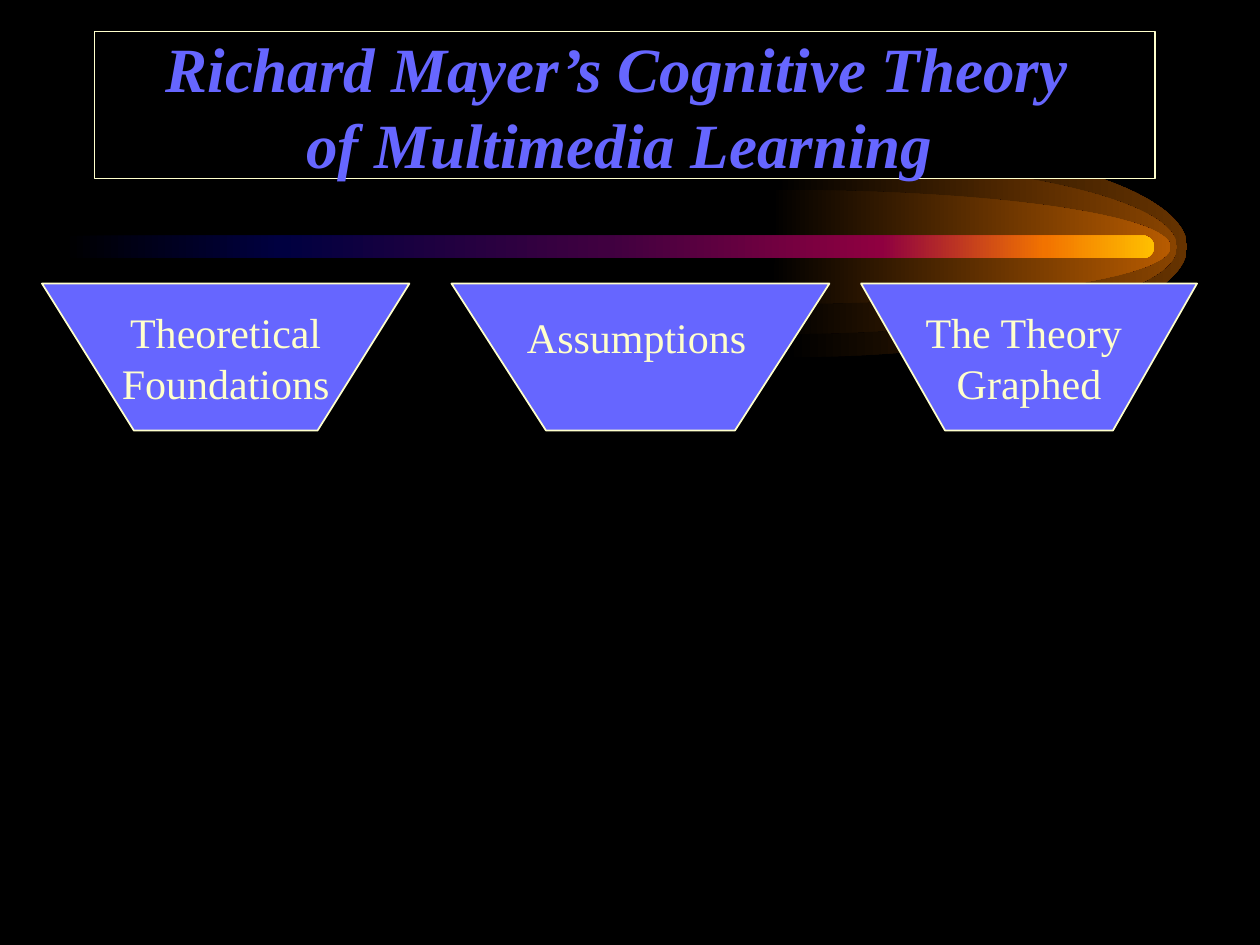
from copy import deepcopy

from lxml.etree import SubElement
from pptx import Presentation
from pptx.dml.color import RGBColor
from pptx.enum.shapes import MSO_SHAPE
from pptx.enum.text import MSO_ANCHOR, MSO_AUTO_SIZE, PP_ALIGN
from pptx.oxml.ns import qn
from pptx.util import Pt

RECTANGLE, ROUNDED = MSO_SHAPE.RECTANGLE, MSO_SHAPE.ROUNDED_RECTANGLE
TOP, MIDDLE = MSO_ANCHOR.TOP, MSO_ANCHOR.MIDDLE
CENTER, LEFT = PP_ALIGN.CENTER, PP_ALIGN.LEFT
GROW = MSO_AUTO_SIZE.SHAPE_TO_FIT_TEXT
FONT = "Times New Roman"
COLORS = {
    "black": "000000", "violet": "6666FF", "cream": "FFFFCC",
    "outer": "663300", "middle": "894400", "inner": "B75B00",
    "navy": "000040", "purple": "400040", "crimson": "8F0040",
    "orange": "F27300", "gold": "FFBF00",
}
COMET_STOPS = [(0, "black"), (0.2, "navy"), (0.5, "purple"),
               (0.75, "crimson"), (0.9, "orange"), (1, "gold")]
GLOWS = [(449.3, 63, "outer"), (443.5, 49.8, "middle"), (439.9, 32.6, "inner")]
COMET_MIDDLE = 141.1
GLOW_WIDTH, GLOW_INSET = 229, 3.6
CURVE = 0.55
TRAPEZOID_LEFT, TRAPEZOID_PITCH = 24, 234
TRAPEZOID_TOP, TRAPEZOID_HEIGHT = 162, 84
TRAPEZOIDS = [(210, ["Theoretical", "Foundations"]), (216, []),
              (192, ["The Theory ", "Graphed"])]


def color(name):
    """Return the named colour."""
    return RGBColor.from_string(COLORS[name])


def paint(shape, fill, line="cream"):
    """Give a shape a solid fill and a thin outline."""
    shape.shadow.inherit = False
    shape.fill.solid()
    shape.fill.fore_color.rgb = color(fill)
    shape.line.color.rgb = color(line)
    shape.line.width = Pt(1)


def paint_gradient(shape, stops):
    """Fill a shape from left to right through the given colour stops."""
    shape.shadow.inherit = False
    shape.line.fill.background()
    shape.fill.gradient()
    shape.fill.gradient_angle = 0
    stop_list = shape._element.spPr.find(qn("a:gradFill")).find(qn("a:gsLst"))
    for _ in stops[2:]:
        stop_list.append(deepcopy(stop_list[0]))
    for stop, (position, name) in zip(shape.fill.gradient_stops, stops):
        stop.position = position
        stop.color.rgb = color(name)


def write(shape, lines, size=24, ink="cream", align=CENTER, anchor=MIDDLE, strong=False):
    """Write one paragraph for each line in a shape."""
    frame = shape.text_frame
    frame.word_wrap = False
    frame.vertical_anchor = anchor
    frame.text = "\n".join(lines)
    for paragraph in frame.paragraphs:
        paragraph.alignment = align
        font = paragraph.font
        font.name, font.size = FONT, Pt(size)
        font.bold = font.italic = strong
        font.color.rgb = color(ink)


def add_polygon(page, points):
    """Add a closed outline through the points."""
    corners = [(Pt(x), Pt(y)) for x, y in points]
    builder = page.shapes.build_freeform(*corners[0])
    builder.add_line_segments(corners[1:], close=True)
    return builder.convert_to_shape()


def bend(shape, curves):
    """Turn the first line segments, three at a time, into curves."""
    outline = next(shape._element.iter(qn("a:path")))
    lines = outline.findall(qn("a:lnTo"))
    for start in range(0, 3 * curves, 3):
        curve = SubElement(outline, qn("a:cubicBezTo"))
        lines[start].addprevious(curve)
        for line in lines[start:start + 3]:
            curve.append(line[0])
            outline.remove(line)


def add_glow(page, left, radius, edge):
    """Add a half ellipse that brightens towards its right edge."""
    right, middle = left + GLOW_WIDTH, COMET_MIDDLE
    start = left + GLOW_INSET
    shoulder = start + CURVE * (right - start)
    glow = add_polygon(page, [
        (start, middle - radius), (shoulder, middle - radius),
        (right, middle - CURVE * radius), (right, middle),
        (right, middle + CURVE * radius), (shoulder, middle + radius),
        (left, middle + radius), (start, middle)])
    bend(glow, 2)
    paint_gradient(glow, [(0, "black"), (1, edge)])


def add_comet(page):
    """Add the glows and the rounded bar in front of them."""
    for glow in GLOWS:
        add_glow(page, *glow)
    bar = page.shapes.add_shape(ROUNDED, Pt(36), Pt(COMET_MIDDLE - 6.5), Pt(623.5), Pt(13))
    bar.adjustments[0] = 0.5
    paint_gradient(bar, COMET_STOPS)


def add_title(page):
    """Add the framed title, with a small closing space."""
    box = page.shapes.add_shape(RECTANGLE, Pt(54), Pt(18), Pt(606), Pt(84))
    paint(box, "black")
    write(box, ["Richard Mayer’s Cognitive Theory ", "of Multimedia Learning"],
          size=36, ink="violet", strong=True)
    span = box.text_frame.paragraphs[-1].add_run()
    span.text = " "
    span.font.size = Pt(24)
    span.font.bold = span.font.italic = False
    span.font.color.rgb = color("cream")


def add_trapezoid(page, left, width, lines):
    """Add a trapezoid that narrows by a quarter on each side."""
    inset, right = width / 4, left + width
    bottom = TRAPEZOID_TOP + TRAPEZOID_HEIGHT
    shape = add_polygon(page, [(left, TRAPEZOID_TOP), (left + inset, bottom),
                               (right - inset, bottom), (right, TRAPEZOID_TOP)])
    paint(shape, "violet")
    if lines:
        write(shape, lines)


def add_label(page):
    """Add the label that lies on the middle trapezoid."""
    label = page.shapes.add_textbox(Pt(294), Pt(174.5), Pt(140), Pt(36))
    write(label, ["Assumptions"], align=LEFT, anchor=TOP)
    label.text_frame.auto_size = GROW


def main():
    """Build the slide and save it."""
    deck = Presentation()
    deck.slide_width, deck.slide_height = Pt(720), Pt(540)
    page = deck.slides.add_slide(deck.slide_layouts[6])
    page.background.fill.solid()
    page.background.fill.fore_color.rgb = color("black")
    add_comet(page)
    add_title(page)
    for index, (width, lines) in enumerate(TRAPEZOIDS):
        add_trapezoid(page, TRAPEZOID_LEFT + index * TRAPEZOID_PITCH, width, lines)
    add_label(page)
    deck.save("out.pptx")


if __name__ == "__main__":
    main()
